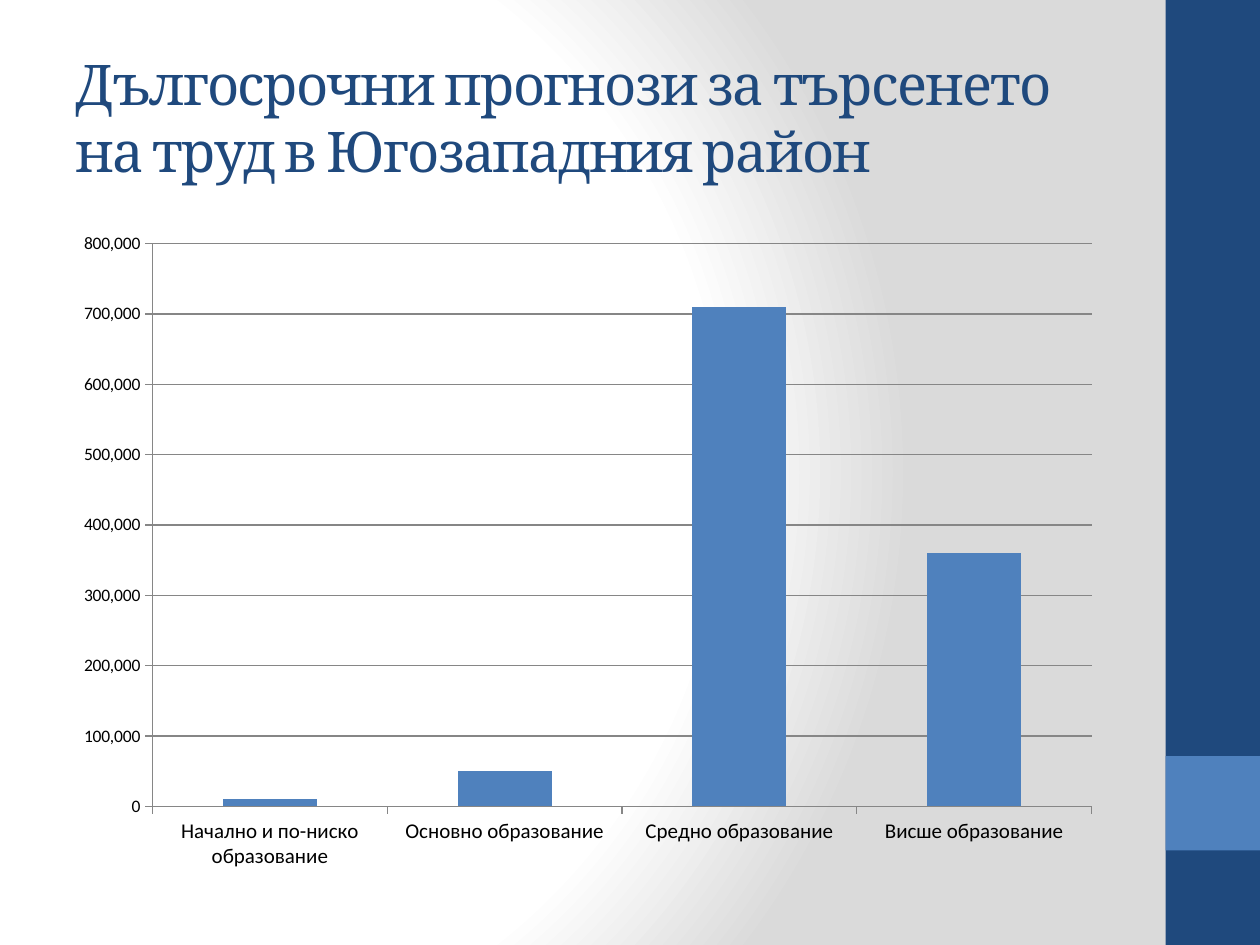
import pptx
import pptx.util
import pptx.chart.data
import pptx.dml.color
import pptx.enum.chart
import pptx.enum.shapes
import pptx.enum.text
import pptx.oxml
import pptx.oxml.ns

PX = 9144
NAVY, BLUE, GREY, BLACK = "1F497D", "4F81BD", "868686", "000000"
TITLE = "Дългосрочни прогнози за търсенето на труд в Югозападния район"
BANDS = [(925, 0, 75, 750, NAVY), (925, 600, 75, 75, BLUE)]
TITLE_BOX = (50, 30, 833, 125)
CHART_BOX = (50, 175, 833, 525)
DATA = [
    ("Начално и по-ниско образование", 10000),
    ("Основно образование", 50000),
    ("Средно образование", 710000),
    ("Висше образование", 360000),
]
STOPS = [(0, "FFFFFF"), (75, "FFFFFF"), (100, "DADADA")]
FOCUS = {"l": 20, "t": 50, "r": 100, "b": 50}


def color(code):
    return pptx.dml.color.RGBColor.from_string(code)


def scale(box):
    return [n * PX for n in box]


def style(font, name, size, code):
    font.name = name
    font.size = pptx.util.Pt(size)
    font.color.rgb = color(code)
    font.bold = False


def rule(line):
    line.color.rgb = color(GREY)
    line.width = pptx.util.Pt(0.75)


def paint_back(slide):
    slide.background.fill.solid()
    stops = "".join(
        f'<a:gs pos="{pos * 1000}"><a:srgbClr val="{code}"/></a:gs>'
        for pos, code in STOPS
    )
    focus = " ".join(f'{side}="{n * 1000}"' for side, n in FOCUS.items())
    grad = pptx.oxml.parse_xml(
        f'<a:gradFill {pptx.oxml.ns.nsdecls("a")} rotWithShape="1">'
        f"<a:gsLst>{stops}</a:gsLst>"
        f'<a:path path="circle"><a:fillToRect {focus}/></a:path></a:gradFill>'
    )
    back = slide.element.find(".//" + pptx.oxml.ns.qn("p:bgPr"))
    back.replace(back[0], grad)


def add_bands(slide):
    for *box, code in BANDS:
        band = slide.shapes.add_shape(
            pptx.enum.shapes.MSO_SHAPE.RECTANGLE, *scale(box)
        )
        band.shadow.inherit = False
        band.fill.solid()
        band.fill.fore_color.rgb = color(code)
        band.line.fill.background()


def set_title(slide):
    title = slide.shapes.title
    title.left, title.top, title.width, title.height = scale(TITLE_BOX)
    frame = title.text_frame
    frame.text = TITLE
    frame.word_wrap = True
    frame.auto_size = pptx.enum.text.MSO_AUTO_SIZE.NONE
    frame.vertical_anchor = pptx.enum.text.MSO_ANCHOR.MIDDLE
    para = frame.paragraphs[0]
    para.alignment = pptx.enum.text.PP_ALIGN.LEFT
    style(para.font, "Cambria", 32, NAVY)
    para.runs[0]._r.get_or_add_rPr().set("spc", "-100")


def add_chart(slide):
    names, values = zip(*DATA)
    data = pptx.chart.data.CategoryChartData(number_format="#,##0")
    data.categories = names
    data.add_series("Series 1", values)
    chart = slide.shapes.add_chart(
        pptx.enum.chart.XL_CHART_TYPE.COLUMN_CLUSTERED, *scale(CHART_BOX), data
    ).chart
    chart.has_legend = False
    chart.has_title = False
    style(chart.font, "Calibri", 10, BLACK)
    plot = chart.plots[0]
    plot.gap_width = 150
    plot.vary_by_categories = False
    fill = plot.series[0].format.fill
    fill.solid()
    fill.fore_color.rgb = color(BLUE)
    cat, val = chart.category_axis, chart.value_axis
    for axis, size in ((cat, 12), (val, 10)):
        style(axis.tick_labels.font, "Calibri", size, BLACK)
        axis.major_tick_mark = pptx.enum.chart.XL_TICK_MARK.OUTSIDE
        rule(axis.format.line)
    val.minimum_scale, val.maximum_scale, val.major_unit = 0, 800000, 100000
    val.tick_labels.number_format = "#,##0"
    val.tick_labels.number_format_is_linked = False
    val.has_major_gridlines = True
    rule(val.major_gridlines.format.line)


def main():
    deck = pptx.Presentation()
    deck.slide_width, deck.slide_height = scale((1000, 750))
    slide = deck.slides.add_slide(deck.slide_layouts[5])
    paint_back(slide)
    add_bands(slide)
    set_title(slide)
    add_chart(slide)
    deck.save("out.pptx")


if __name__ == "__main__":
    main()
